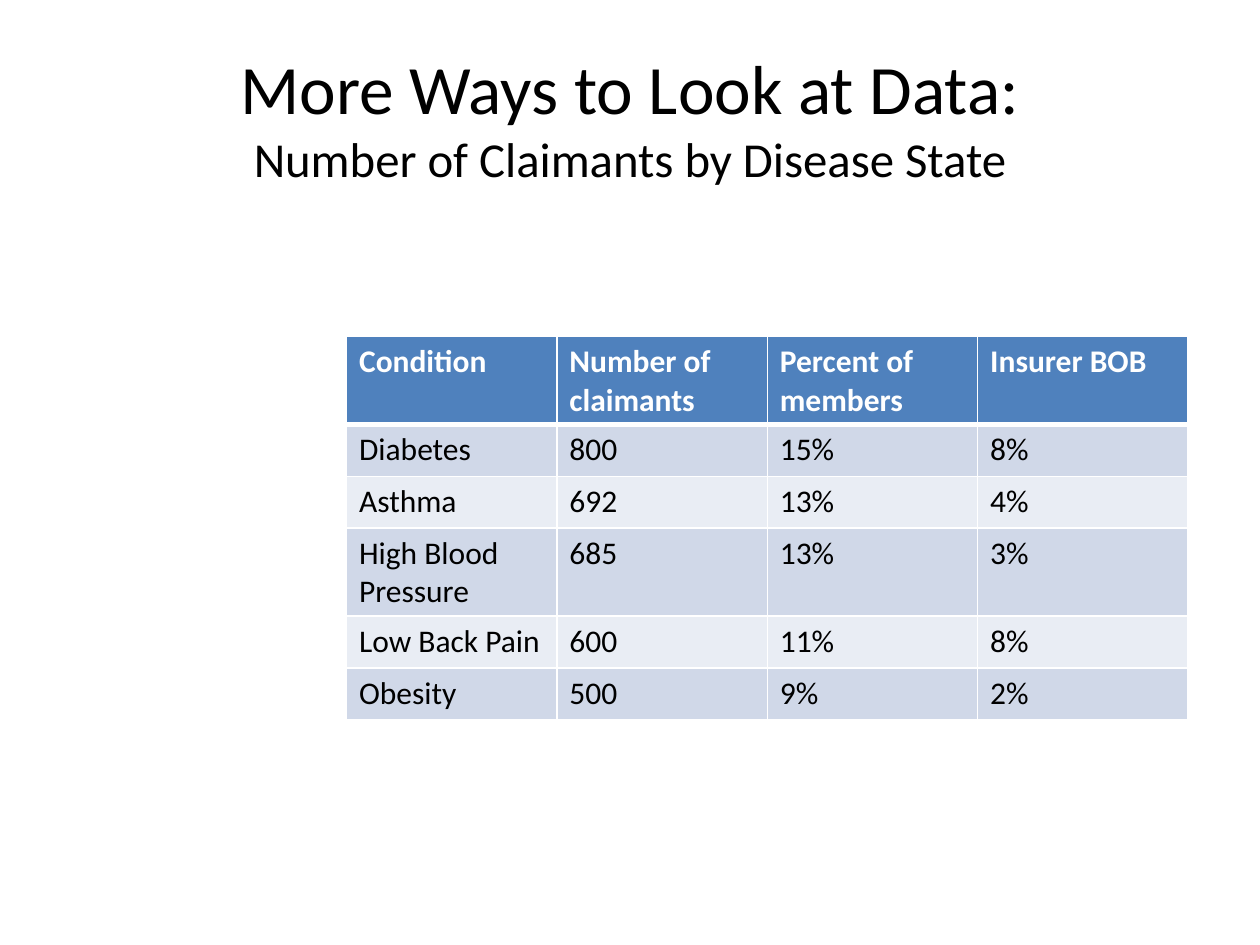
"""Build a slide with a table of claimants by disease state."""
from lxml.etree import SubElement
from pptx import Presentation
from pptx.dml.color import RGBColor
from pptx.enum.text import MSO_ANCHOR, PP_ALIGN
from pptx.oxml.ns import qn
from pptx.util import Inches, Pt

FONT = "Calibri"
BLACK = RGBColor(0x00, 0x00, 0x00)
WHITE = RGBColor(0xFF, 0xFF, 0xFF)
BLUE = RGBColor(0x4F, 0x81, 0xBD)
BAND_DARK = RGBColor(0xD0, 0xD8, 0xE8)
BAND_LIGHT = RGBColor(0xE9, 0xED, 0xF4)

ROWS = [
    ("Condition", "Number of claimants", "Percent of members", "Insurer BOB"),
    ("Diabetes", "800", "15%", "8%"),
    ("Asthma", "692", "13%", "4%"),
    ("High Blood Pressure", "685", "13%", "3%"),
    ("Low Back Pain", "600", "11%", "8%"),
    ("Obesity", "500", "9%", "2%"),
]
COL_WIDTH = 1.67
ROW_HEIGHT = 0.41


def add_run(p, text, size, color, bold=False):
    r = p.add_run()
    r.text = text
    r.font.name = FONT
    r.font.size = Pt(size)
    r.font.color.rgb = color
    r.font.bold = bold


def add_title(slide, heading, subheading):
    box = slide.shapes.add_textbox(Inches(0.5), Inches(0.3), Inches(9), Inches(1.25))
    tf = box.text_frame
    tf.word_wrap = True
    tf.vertical_anchor = MSO_ANCHOR.MIDDLE
    p = tf.paragraphs[0]
    p.alignment = PP_ALIGN.CENTER
    add_run(p, heading, 39.6, BLACK)
    p.add_line_break()
    add_run(p, subheading, 27.9, BLACK)


def set_borders(cell, top, bottom):
    tc_pr = cell._tc.get_or_add_tcPr()
    for side, width in (("L", 1), ("R", 1), ("T", top), ("B", bottom)):
        ln = SubElement(tc_pr, qn(f"a:ln{side}"), w=str(Pt(width)))
        fill = SubElement(ln, qn("a:solidFill"))
        SubElement(fill, qn("a:srgbClr"), val=str(WHITE))


def style_cell(cell, text, row):
    header = row == 0
    set_borders(cell, top=3 if row == 1 else 1, bottom=3 if header else 1)
    cell.fill.solid()
    cell.fill.fore_color.rgb = BLUE if header else BAND_DARK if row % 2 else BAND_LIGHT
    add_run(cell.text_frame.paragraphs[0], text, 18, WHITE if header else BLACK, header)


def add_claimants_table(slide):
    n_rows, n_cols = len(ROWS), len(ROWS[0])
    table = slide.shapes.add_table(
        n_rows, n_cols, Inches(2.75), Inches(2.67),
        Inches(COL_WIDTH * n_cols), Inches(ROW_HEIGHT * n_rows),
    ).table
    for i, values in enumerate(ROWS):
        for j, text in enumerate(values):
            style_cell(table.cell(i, j), text, i)


def main():
    prs = Presentation()
    prs.slide_width, prs.slide_height = Inches(10), Inches(7.5)
    slide = prs.slides.add_slide(prs.slide_layouts[6])
    add_title(slide, "More Ways to Look at Data:", "Number of Claimants by Disease State")
    add_claimants_table(slide)
    prs.save("out.pptx")


if __name__ == "__main__":
    main()
